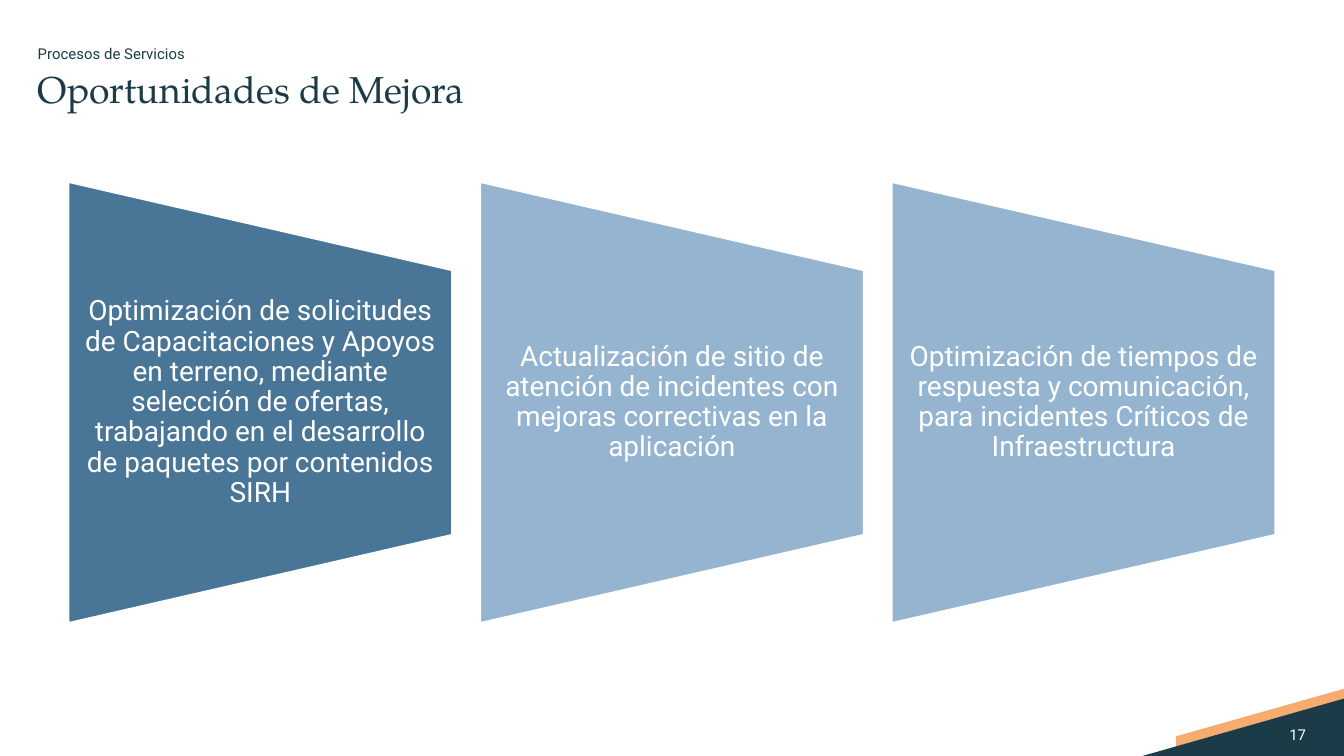
"""Build the slide on improvement opportunities in service processes."""
from pptx import Presentation
from pptx import util as u
from pptx.dml.color import RGBColor
from pptx.enum import shapes, text

PX = 9525
NAVY = RGBColor(0x1A, 0x3B, 0x47)
ORANGE = RGBColor(0xF7, 0xAC, 0x6F)
STEEL = RGBColor(0x49, 0x76, 0x96)
SKY = RGBColor(0x95, 0xB4, 0xD0)
WHITE = RGBColor(0xFF, 0xFF, 0xFF)
SANS, SERIF = "Roboto", "TeX Gyre Pagella"

TITLE = "Oportunidades de Mejora"
SECTION = "Procesos de Servicios"
PAGE_NUMBER = "17"
CARDS = [
    ("Optimización de solicitudes de Capacitaciones y Apoyos en terreno, mediante selección "
     "de ofertas, trabajando en el desarrollo de paquetes por contenidos SIRH", STEEL),
    ("Actualización de sitio de atención de incidentes con mejoras correctivas en la aplicación", SKY),
    ("Optimización de tiempos de respuesta y comunicación, para incidentes Críticos de "
     "Infraestructura", SKY),
]
CORNER_BANDS = [
    ([(960, 492), (840, 526), (840, 540), (960, 522)], ORANGE),
    ([(816, 540), (960, 499), (960, 540)], NAVY),
]

CARD_LEFT, CARD_TOP, CARD_PITCH = 49, 130, 294
CARD_WIDTH, CARD_HEIGHT = 274, 315
LABEL_HEIGHT = 189


def px(*lengths):
    return [u.Emu(round(length * PX)) for length in lengths]


def paint(shape, color):
    shape.shadow.inherit = False
    shape.fill.solid()
    shape.fill.fore_color.rgb = color
    shape.line.fill.background()


def add_text(page, place, words, size, color, font=SANS, align=text.PP_ALIGN.LEFT,
             anchor=text.MSO_ANCHOR.TOP, insets=(0, 0, 0, 0), spacing=0.9):
    frame = page.shapes.add_textbox(*px(*place)).text_frame
    frame.word_wrap = True
    frame.vertical_anchor = anchor
    (frame.margin_left, frame.margin_top,
     frame.margin_right, frame.margin_bottom) = px(*insets)
    para = frame.paragraphs[0]
    para.alignment = align
    para.line_spacing = spacing
    span = para.add_run()
    span.text = words
    span.font.name = font
    span.font.size = u.Pt(size)
    span.font.color.rgb = color


def add_card(page, index, words, color):
    left = CARD_LEFT + index * CARD_PITCH
    middle_x, middle_y = left + CARD_WIDTH / 2, CARD_TOP + CARD_HEIGHT / 2
    card = page.shapes.add_shape(
        shapes.MSO_SHAPE.FLOWCHART_MANUAL_OPERATION,
        *px(middle_x - CARD_HEIGHT / 2, middle_y - CARD_WIDTH / 2, CARD_HEIGHT, CARD_WIDTH))
    card.rotation = 270
    paint(card, color)
    card.line.color.rgb = WHITE
    card.line.width = u.Pt(1)
    add_text(page, (left, middle_y - LABEL_HEIGHT / 2, CARD_WIDTH, LABEL_HEIGHT), words, 15,
             WHITE, align=text.PP_ALIGN.CENTER, anchor=text.MSO_ANCHOR.MIDDLE,
             insets=(10, 0, 10, 0))


def main():
    deck = Presentation()
    deck.slide_width, deck.slide_height = px(960, 540)
    page = deck.slides.add_slide(deck.slide_layouts[6])

    for points, color in CORNER_BANDS:
        builder = page.shapes.build_freeform(*points[0], scale=PX)
        builder.add_line_segments(points[1:], close=True)
        paint(builder.convert_to_shape(), color)

    add_text(page, (903, 512, 30, 26), PAGE_NUMBER, 8, WHITE, align=text.PP_ALIGN.RIGHT,
             anchor=text.MSO_ANCHOR.MIDDLE, spacing=1.0)
    add_text(page, (27, 51, 907, 72), TITLE, 20, NAVY, font=SERIF)
    add_text(page, (27, 28, 907, 20), SECTION, 8, NAVY, insets=(0, 5, 10, 5))

    for index, (words, color) in enumerate(CARDS):
        add_card(page, index, words, color)

    deck.save("out.pptx")


if __name__ == "__main__":
    main()
